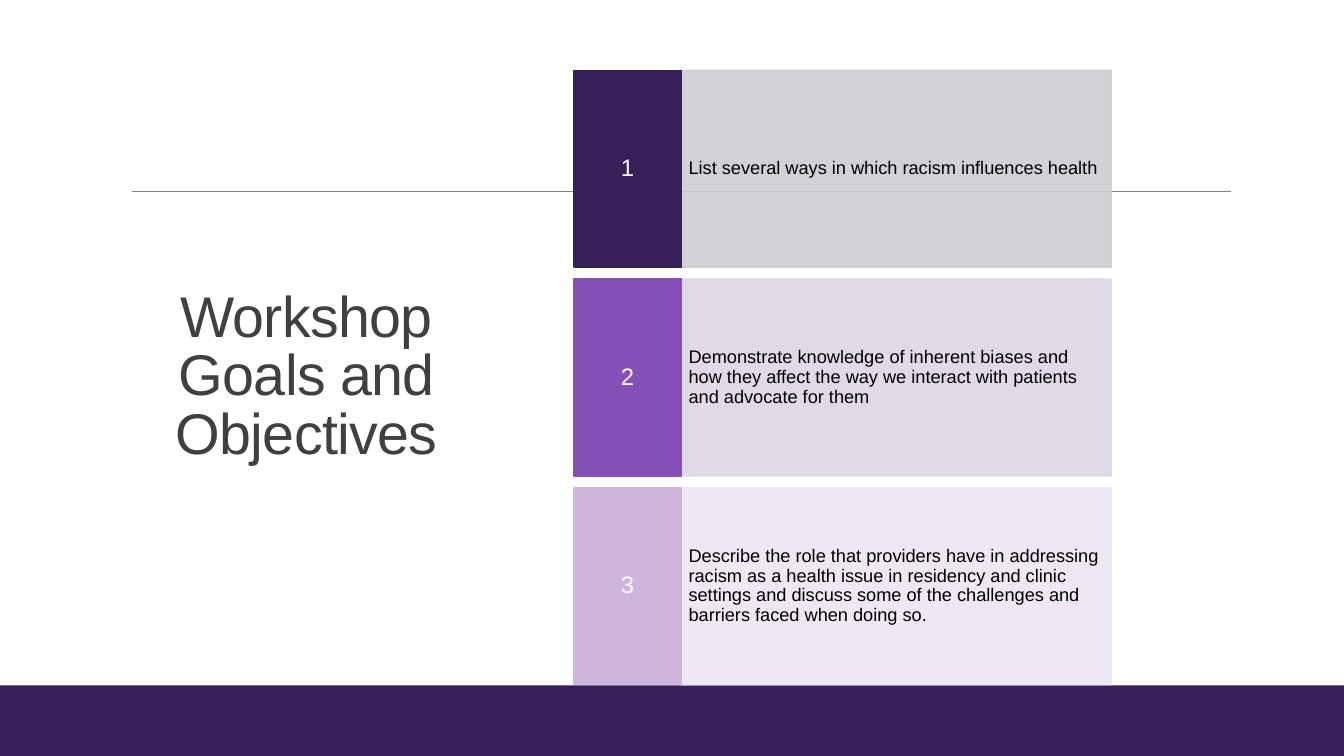
from lxml import etree
from pptx import Presentation
from pptx import util as u
from pptx.dml.color import RGBColor
from pptx.enum import shapes, text
from pptx.oxml.ns import qn

TITLE_LINES = ["Workshop", "Goals and Objectives"]
WHITE = RGBColor(0xFF, 0xFF, 0xFF)
BLACK = RGBColor(0x00, 0x00, 0x00)
GRAY = RGBColor(0x80, 0x80, 0x80)
TITLE_GRAY = RGBColor(0x40, 0x40, 0x40)
DEEP_PURPLE = RGBColor(0x37, 0x20, 0x58)
PURPLE = RGBColor(0x84, 0x4F, 0xB6)
LILAC = RGBColor(0xCD, 0xB5, 0xDC)
PALE_GRAY = RGBColor(0xCE, 0xCD, 0xD1)
PALE_PURPLE = RGBColor(0xDC, 0xD7, 0xE4)
PALE_LILAC = RGBColor(0xED, 0xE6, 0xF2)

GOALS = [
    ("List several ways in which racism influences health", DEEP_PURPLE, PALE_GRAY),
    ("Demonstrate knowledge of inherent biases and how they affect the way we "
     "interact with patients and advocate for them", PURPLE, PALE_PURPLE),
    ("Describe the role that providers have in addressing racism as a health issue "
     "in residency and clinic settings and discuss some of the challenges and "
     "barriers faced when doing so.", LILAC, PALE_LILAC),
]
FONT = "Arial"
TOP, ROW_HEIGHT, ROW_STEP = 0.7, 1.95, 2.07
NUMBER_LEFT, NUMBER_WIDTH = 5.69, 1.07
GOAL_LEFT, GOAL_WIDTH = 6.75, 4.27


def add_rectangle(page, left, top, width, height, color, alpha=None, outlined=True):
    box = page.shapes.add_shape(
        shapes.MSO_SHAPE.RECTANGLE, *map(u.Inches, (left, top, width, height)))
    box.shadow.inherit = False
    box.fill.solid()
    box.fill.fore_color.rgb = color
    if outlined:
        box.line.color.rgb = color
        box.line.width = u.Pt(1.25)
    else:
        box.line.fill.background()
    if alpha:
        for tint in box._element.spPr.iter(qn("a:srgbClr")):
            etree.SubElement(tint, qn("a:alpha")).set("val", str(alpha * 1000))
    return box


def write(box, lines, size, color, align, spacing, side, edge):
    frame = box.text_frame
    frame.word_wrap = True
    frame.vertical_anchor = text.MSO_ANCHOR.MIDDLE
    frame.margin_left = frame.margin_right = u.Inches(side)
    frame.margin_top = frame.margin_bottom = u.Inches(edge)
    para = frame.paragraphs[0]
    para.alignment = align
    para.line_spacing = spacing
    for index, line in enumerate(lines):
        if index:
            para.add_line_break()
        span = para.add_run()
        span.text = line
        span.font.name = FONT
        span.font.size = u.Pt(size)
        span.font.color.rgb = color
    return para


deck = Presentation()
deck.slide_width, deck.slide_height = u.Inches(13.33), u.Inches(7.5)
page = deck.slides.add_slide(deck.slide_layouts[6])

add_rectangle(page, 0, 6.8, 13.33, 0.7, DEEP_PURPLE, outlined=False)
rule = page.shapes.add_connector(
    shapes.MSO_CONNECTOR.STRAIGHT, *map(u.Inches, (1.31, 1.9, 12.21, 1.9)))
rule.line.color.rgb = GRAY
rule.line.width = u.Pt(0.5)
etree.SubElement(rule._element.spPr, qn("a:effectLst"))

title = page.shapes.add_textbox(*map(u.Inches, (1.18, 0.7, 3.72, 6.1)))
heading = write(title, TITLE_LINES, 41, TITLE_GRAY, text.PP_ALIGN.CENTER, 0.85, 0.1, 0.05)
for span in heading.runs:
    span.font._element.set("spc", "-50")

for index, (goal, dark, pale) in enumerate(GOALS):
    top = TOP + index * ROW_STEP
    panel = add_rectangle(page, GOAL_LEFT, top, GOAL_WIDTH, ROW_HEIGHT, pale, alpha=90)
    write(panel, [goal], 13, BLACK, text.PP_ALIGN.LEFT, 0.9, 0.08, 0.5)
    badge = add_rectangle(page, NUMBER_LEFT, top, NUMBER_WIDTH, ROW_HEIGHT, dark)
    write(badge, [str(index + 1)], 17, WHITE, text.PP_ALIGN.CENTER, 0.9, 0.06, 0.19)

deck.save("out.pptx")
